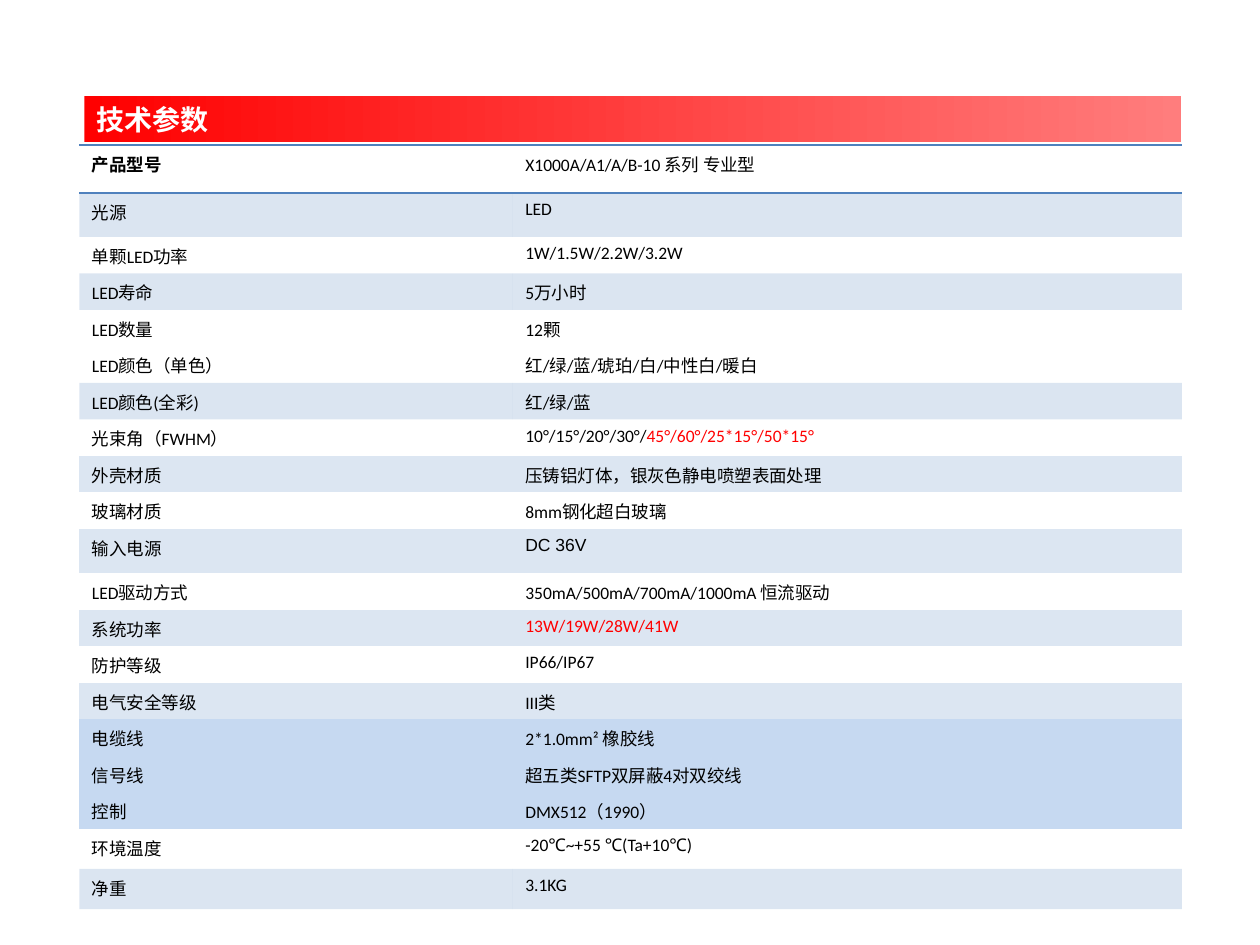
from typing import NamedTuple

from lxml import etree
from pptx import Presentation
from pptx import util as u
from pptx.dml.color import RGBColor
from pptx.enum import shapes, text
from pptx.oxml.ns import qn

WIDTH, HEIGHT = 10, 7.5
BLUE, RED, BLACK, WHITE = "4F81BD", "FF0000", "000000", "FFFFFF"
NO_STYLE = "{2D5ABB26-0587-4C30-8999-92F81FD0307C}"
COLUMNS = (3.44, 5.31)
ROW, TALL, LAST, HEADER = 0.29, 0.35, 0.32, 0.38


class Shade(NamedTuple):
    color: str
    alpha: int = 100


class Span(NamedTuple):
    words: str
    color: str = BLACK


class Spec(NamedTuple):
    label: str
    value: str | tuple[Span, ...]
    shade: Shade | None = None
    height: float = ROW
    label_font: str = "Calibri"
    value_font: str = "Calibri"
    value_color: str = BLACK


TINT = Shade(BLUE, 20)
PALE = Shade("DCE6F2")
CABLE = Shade("C6D9F1")

SPECS = (
    Spec("产品型号", "X1000A/A1/A/B-10 系列 专业型", height=HEADER),
    Spec("光源", "LED", TINT, TALL),
    Spec("单颗LED功率", "1W/1.5W/2.2W/3.2W"),
    Spec("LED寿命", "5万小时", TINT),
    Spec("LED数量", "12颗"),
    Spec("LED颜色（单色）", "红/绿/蓝/琥珀/白/中性白/暖白"),
    Spec("LED颜色(全彩)", "红/绿/蓝", TINT),
    Spec("光束角（FWHM）",
         (Span("10°/15°/20°/30°/"), Span("45°/60°/25*15°/50*15°", RED))),
    Spec("外壳材质", "压铸铝灯体，银灰色静电喷塑表面处理", PALE),
    Spec("玻璃材质", "8mm钢化超白玻璃", label_font="Noto Sans CJK SC"),
    Spec("输入电源", "DC 36V", PALE, TALL, value_font="Arial"),
    Spec("LED驱动方式", "350mA/500mA/700mA/1000mA 恒流驱动"),
    Spec("系统功率", "13W/19W/28W/41W", PALE, value_color=RED),
    Spec("防护等级", "IP66/IP67"),
    Spec("电气安全等级", "III类", PALE),
    Spec("电缆线", "2*1.0mm² 橡胶线", CABLE),
    Spec("信号线", "超五类SFTP双屏蔽4对双绞线", CABLE),
    Spec("控制", "DMX512（1990）", CABLE),
    Spec("环境温度", "-20℃~+55 ℃(Ta+10℃)", height=LAST),
    Spec("净重", "3.1KG", TINT, LAST),
)


def rgb(color: str) -> RGBColor:
    return RGBColor.from_string(color)


def style_font(font, name: str, size: float, bold: bool = False) -> None:
    font.name, font.size, font.bold = name, u.Pt(size), bold


def draw_border(cell, side: str) -> None:
    """Add a 1 pt blue line; borders must come before the cell's fill."""
    line = etree.SubElement(cell._tc.get_or_add_tcPr(), qn(f"a:ln{side}"), w="12700")
    fill = etree.SubElement(line, qn("a:solidFill"))
    etree.SubElement(fill, qn("a:srgbClr"), val=BLUE)


def paint_cell(cell, shade: Shade | None) -> None:
    if shade is None:
        cell.fill.background()
        return
    cell.fill.solid()
    cell.fill.fore_color.rgb = rgb(shade.color)
    if shade.alpha < 100:
        color = cell._tc.tcPr.find(qn("a:solidFill")).find(qn("a:srgbClr"))
        etree.SubElement(color, qn("a:alpha"), val=str(shade.alpha * 1000))


def write_cell(cell, content: str | tuple[Span, ...], font: str,
               color: str = BLACK, bold: bool = False) -> None:
    cell.margin_bottom = 0
    para = cell.text_frame.paragraphs[0]
    style_font(para.font, font, 10, bold)
    if isinstance(content, str):
        para.add_run().text = content
        para.font.color.rgb = rgb(color)
        return
    for span in content:
        run = para.add_run()
        run.text = span.words
        run.font.color.rgb = rgb(span.color)


def draw_title(page) -> None:
    box = page.shapes.add_shape(
        shapes.MSO_SHAPE.RECTANGLE, u.Inches(0.67), u.Inches(0.76),
        u.Inches(8.7), u.Inches(0.37))
    box.shadow.inherit = False
    box.line.fill.background()
    box.fill.gradient()
    box.fill.gradient_angle = 0
    for stop, color, position in zip(box.fill.gradient_stops, (RED, "FF7D7D"), (0, 1)):
        stop.color.rgb = rgb(color)
        stop.position = position
    frame = box.text_frame
    frame.vertical_anchor = text.MSO_ANCHOR.MIDDLE
    para = frame.paragraphs[0]
    para.text = "技术参数"
    para.alignment = text.PP_ALIGN.LEFT
    style_font(para.font, "Noto Sans CJK SC", 16, True)
    para.font.color.rgb = rgb(WHITE)


def draw_specs(page) -> None:
    frame = page.shapes.add_table(
        len(SPECS), len(COLUMNS), u.Inches(0.63), u.Inches(1.15),
        u.Inches(sum(COLUMNS)), u.Inches(sum(spec.height for spec in SPECS)))
    table = frame.table
    table.first_row = table.horz_banding = False
    table._tbl.tblPr.find(qn("a:tableStyleId")).text = NO_STYLE
    for column, width in zip(table.columns, COLUMNS):
        column.width = u.Inches(width)
    for index, (row, spec) in enumerate(zip(table.rows, SPECS)):
        row.height = u.Inches(spec.height)
        label, value = row.cells
        write_cell(label, spec.label, spec.label_font, bold=index == 0)
        write_cell(value, spec.value, spec.value_font, spec.value_color)
        for cell in (label, value):
            # The header row is ruled above and below
            if index == 0:
                draw_border(cell, "T")
                draw_border(cell, "B")
            paint_cell(cell, spec.shade)


def main() -> None:
    deck = Presentation()
    deck.slide_width, deck.slide_height = u.Inches(WIDTH), u.Inches(HEIGHT)
    page = deck.slides.add_slide(deck.slide_layouts[6])
    draw_title(page)
    draw_specs(page)
    deck.save("out.pptx")


if __name__ == "__main__":
    main()
